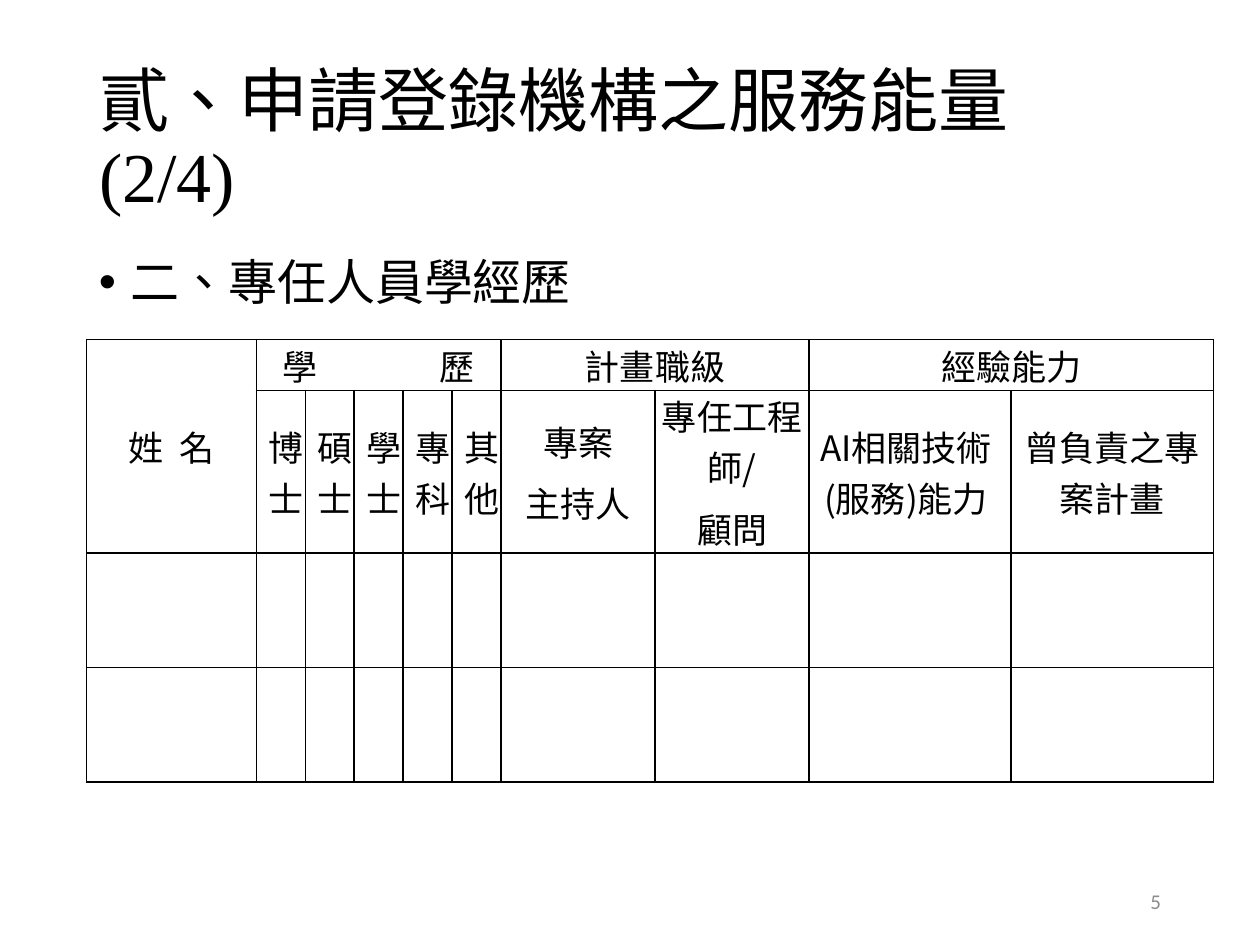
"""Build the slide on staff education and experience with its blank form table."""
from dataclasses import dataclass

import pptx
import pptx.dml.color
import pptx.enum.text
import pptx.oxml
import pptx.oxml.ns
import pptx.util
from lxml import etree

Pt = pptx.util.Pt
ALIGN = pptx.enum.text.PP_ALIGN
MIDDLE = pptx.enum.text.MSO_ANCHOR.MIDDLE
TOP = pptx.enum.text.MSO_ANCHOR.TOP
CJK = "Noto Sans CJK SC"
SERIF = "Times New Roman"


@dataclass
class Box:
    text: str
    left: float
    top: float
    width: float
    height: float
    anchor: object
    style: dict


@dataclass
class Heading:
    row: int
    col: int
    text: str
    rows: int = 1
    cols: int = 1
    indent: float = 0
    gap: float = 0
    margin_right: float = 1.4


BOXES = [
    Box("貳、申請登錄機構之服務能量(2/4)", 49.5, 28.8, 610, 104.4, MIDDLE,
        dict(size=40, font=SERIF, line=0.9)),
    Box("二、專任人員學經歷", 49.5, 144, 621, 342.7, TOP,
        dict(size=28, font=SERIF, line=0.9, before=10, align=ALIGN.JUSTIFY,
             indent=18, hanging=18, bullet="•")),
    Box("5", 508.5, 500.5, 162, 28.8, MIDDLE,
        dict(size=12, font="Calibri", color="8C8C8C", align=ALIGN.RIGHT)),
]
COL_WIDTHS = [97] + [28] * 5 + [88] * 2 + [115.5] * 2
ROW_HEIGHTS = [29, 93, 65.5, 65.5]
DEGREES = ["博士", "碩士", "學士", "專科", "其他"]
HEADINGS = [
    Heading(0, 0, "姓 名", rows=2, gap=4.5),
    Heading(0, 1, "學 歷", cols=5, gap=65),
    Heading(0, 6, "計畫職級", cols=2),
    Heading(0, 8, "經驗能力", cols=2),
    *[Heading(1, i, name, indent=5.7) for i, name in enumerate(DEGREES, 1)],
    Heading(1, 6, "專案\n主持人"),
    Heading(1, 7, "專任工程師/\n顧問"),
    Heading(1, 8, "AI相關技術(服務)能力", margin_right=6),
    Heading(1, 9, "曾負責之專案計畫"),
]


def rgb(value: str):
    """Turn a hex string into a colour."""
    return pptx.dml.color.RGBColor.from_string(value)


def add_xml(parent, tag: str, **attrs: str):
    """Append a child element with the given attributes."""
    return etree.SubElement(parent, pptx.oxml.ns.qn(tag), attrs)


def write(tf, text: str, *, size: float, font: str, color: str = "000000",
          align=ALIGN.LEFT, line: float = 1, before: float = 0, after: float = 0,
          indent: float = 0, hanging: float = 0, bullet: str = "", gap: float = 0) -> None:
    """Write a paragraph for each line, widening its first space by gap."""
    for i, words in enumerate(text.split("\n")):
        p = tf.add_paragraph() if i else tf.paragraphs[0]
        p.alignment, p.line_spacing = align, line
        p.space_before, p.space_after = Pt(before), Pt(after)
        pPr = p._p.get_or_add_pPr()
        pPr.set("marL", str(Pt(indent)))
        pPr.set("indent", str(-Pt(hanging)))
        if bullet:
            add_xml(pPr, "a:buFont", typeface="Arial")
            add_xml(pPr, "a:buChar", char=bullet)
        for part in words.partition(" ") if gap else [words]:
            r = p.add_run()
            r.text = part
            r.font.size, r.font.name = Pt(size), font
            r.font.color.rgb = rgb(color)
            rPr = r._r.get_or_add_rPr()
            rPr.set("lang", "zh-TW")
            if part == " ":
                rPr.set("spc", str(round(gap * 100)))
            add_xml(rPr, "a:ea", typeface=CJK)


def add_box(s, box: Box) -> None:
    """Add a wrapped text box."""
    sp = s.shapes.add_textbox(Pt(box.left), Pt(box.top), Pt(box.width), Pt(box.height))
    tf = sp.text_frame
    tf.word_wrap, tf.vertical_anchor = True, box.anchor
    write(tf, box.text, **box.style)


def format_cell(cell) -> None:
    """Give a cell thin black borders, no fill and tight margins."""
    cell.margin_left = cell.margin_right = Pt(1.4)
    cell.margin_top = cell.margin_bottom = Pt(0)
    cell.vertical_anchor = MIDDLE
    tcPr = cell._tc.get_or_add_tcPr()
    for side in ("a:lnL", "a:lnR", "a:lnT", "a:lnB"):
        ln = add_xml(tcPr, side, w=str(Pt(1)))
        add_xml(add_xml(ln, "a:solidFill"), "a:srgbClr", val="000000")
    cell.fill.background()


def add_form(s) -> None:
    """Add the staff table with its two heading rows."""
    table = s.shapes.add_table(len(ROW_HEIGHTS), len(COL_WIDTHS), Pt(49.5), Pt(194),
                               Pt(sum(COL_WIDTHS)), Pt(sum(ROW_HEIGHTS))).table
    table.first_row = table.horz_banding = False
    for col, width in zip(table.columns, COL_WIDTHS):
        col.width = Pt(width)
    for row, height in zip(table.rows, ROW_HEIGHTS):
        row.height = Pt(height)
    for cell in table.iter_cells():
        format_cell(cell)
    for h in HEADINGS:
        cell = table.cell(h.row, h.col)
        if h.rows * h.cols > 1:
            cell.merge(table.cell(h.row + h.rows - 1, h.col + h.cols - 1))
        cell.margin_right = Pt(h.margin_right)
        write(cell.text_frame, h.text, size=20, font=CJK, align=ALIGN.CENTER,
              after=6, indent=h.indent, gap=h.gap)


def main() -> None:
    """Build and save the slide."""
    prs = pptx.Presentation()
    prs.slide_width, prs.slide_height = Pt(720), Pt(540)
    s = prs.slides.add_slide(prs.slide_layouts[6])
    for box in BOXES:
        add_box(s, box)
    add_form(s)
    prs.save("out.pptx")


if __name__ == "__main__":
    main()
